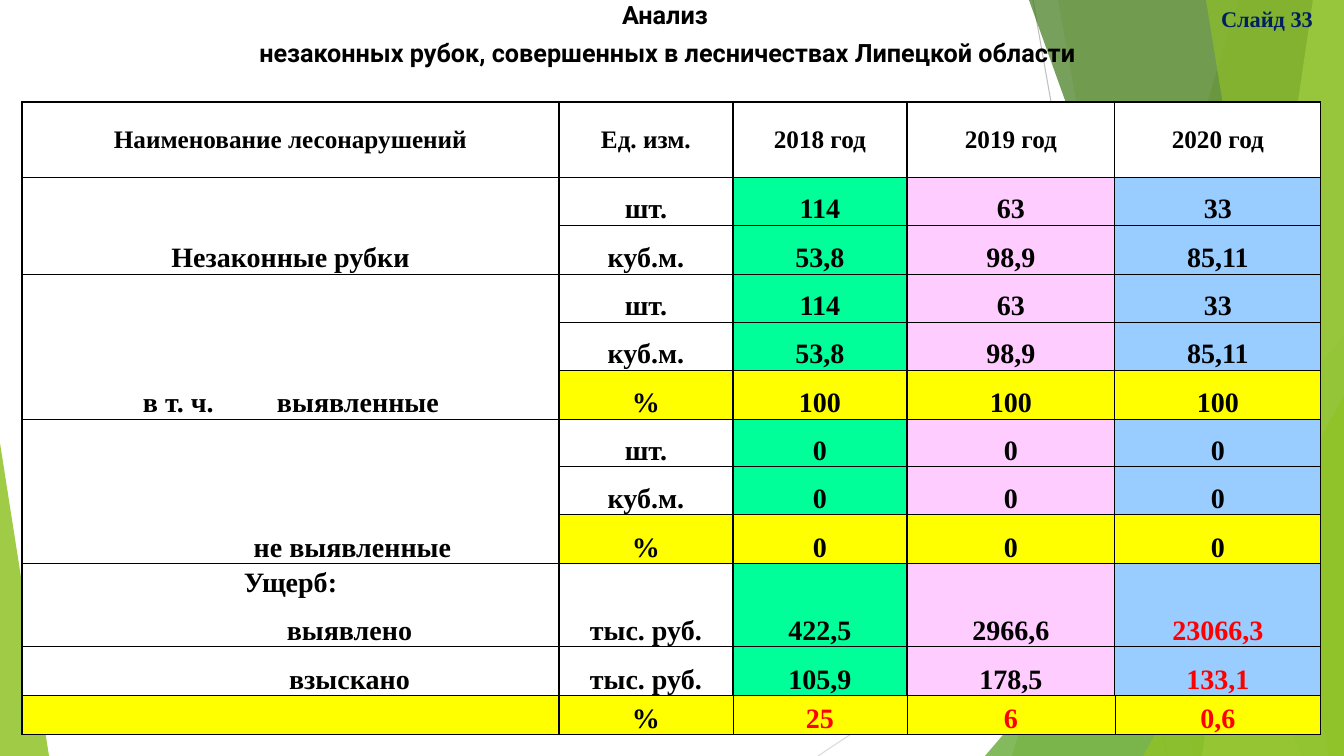
from dataclasses import dataclass
from itertools import pairwise

from lxml.etree import SubElement
from pptx import Presentation
from pptx.dml.color import RGBColor
from pptx.enum.shapes import MSO_CONNECTOR, MSO_SHAPE
from pptx.enum.text import MSO_ANCHOR, MSO_AUTO_SIZE, PP_ALIGN
from pptx.oxml.ns import qn
from pptx.util import Pt

EMU_PER_PX = 914400 / 100.8
WIDTH, HEIGHT = 1344, 756
NO_STYLE = "{2D5ABB26-0587-4C30-8999-92F81FD0307C}"

BLACK = RGBColor(0x00, 0x00, 0x00)
WHITE = RGBColor(0xFF, 0xFF, 0xFF)
RED = RGBColor(0xFF, 0x00, 0x00)
NAVY = RGBColor(0x00, 0x20, 0x60)
YELLOW = RGBColor(0xFF, 0xFF, 0x00)
MINT = RGBColor(0x00, 0xFF, 0x99)
PINK = RGBColor(0xFF, 0xCC, 0xFF)
SKY = RGBColor(0x99, 0xCC, 0xFF)
GRAY = RGBColor(0xBF, 0xBF, 0xBF)
LIGHT_GRAY = RGBColor(0xD9, 0xD9, 0xD9)
GREEN = RGBColor(0x90, 0xC2, 0x26)
MID_GREEN = RGBColor(0x54, 0xA0, 0x21)
DARK_GREEN = RGBColor(0x3F, 0x78, 0x19)
LIME = RGBColor(0xC0, 0xE4, 0x74)


@dataclass(frozen=True)
class Facet:
    """A band from a slanted left edge to the right side of the slide."""
    top_x: int
    bottom_x: int
    color: RGBColor
    opacity: int


@dataclass(frozen=True)
class Triangle:
    """A triangle standing on the bottom of the slide."""
    left: int
    top: int
    width: int
    apex: int
    color: RGBColor
    opacity: int


@dataclass(frozen=True)
class Ray:
    start: tuple[int, int]
    end: tuple[int, int]
    color: RGBColor


RAYS = [
    Ray((1033, 0), (1167, HEIGHT), GRAY),
    Ray((WIDTH, 406), (818, HEIGHT), LIGHT_GRAY),
]
BACKDROP = [
    Facet(1238, 1012, GREEN, 30),
    Facet(1058, 1193, GREEN, 20),
    Triangle(985, 336, 359, 1, MID_GREEN, 72),
    Facet(1029, 1301, DARK_GREEN, 70),
    Facet(1313, 1202, LIME, 70),
    Facet(1206, 1329, GREEN, 65),
    Triangle(1143, 396, 201, 1, GREEN, 80),
    Triangle(0, 443, 49, 0, GREEN, 85),
]

TITLE = ["Анализ", "незаконных рубок, совершенных в лесничествах Липецкой области"]
COLUMN_EDGES = [22, 559, 733, 907, 1115, 1321]
ROW_EDGES = [102, 177, 225, 274, 322, 370, 419, 467, 515, 564, 599, 647, 696, 735]
COLUMN_FILLS = [WHITE, WHITE, MINT, PINK, SKY]
PIECES = ["шт.", "114", "63", "33"]
VOLUME = ["куб.м.", "53,8", "98,9", "85,11"]
ROWS = [
    ["Наименование лесонарушений", "Ед. изм.", "2018 год", "2019 год", "2020 год"],
    ["Незаконные рубки", *PIECES],
    ["", *VOLUME],
    ["в т. ч.\tвыявленные", *PIECES],
    ["", *VOLUME],
    ["", "%", "100", "100", "100"],
    ["не выявленные", "шт.", "0", "0", "0"],
    ["", "куб.м.", "0", "0", "0"],
    ["", "%", "0", "0", "0"],
    ["Ущерб:", "", "", "", ""],
    ["выявлено", "тыс. руб.", "422,5", "2966,6", "23066,3"],
    ["взыскано", "тыс. руб.", "105,9", "178,5", "133,1"],
    ["", "%", "25", "6", "0,6"],
]
MERGED_ROWS = [(1, 2), (3, 5), (6, 8)]
INDENTS = {"в т. ч.\tвыявленные": 121, "не выявленные": 125, "выявлено": 119, "взыскано": 119}
DETECTED_TAB = 134
LAST_ROW = len(ROWS) - 1


def px(length: int) -> int:
    return round(length * EMU_PER_PX)


def write_text(frame, text: str, *, size: int, font: str = "Times New Roman",
               color: RGBColor = BLACK, align=PP_ALIGN.CENTER) -> None:
    paragraph = frame.paragraphs[0]
    paragraph.alignment = align
    run = paragraph.add_run()
    run.text = text
    run.font.name, run.font.size, run.font.bold = font, Pt(size), True
    run.font.color.rgb = color


def paint(shape, color: RGBColor, opacity: int) -> None:
    shape.shadow.inherit = False
    shape.line.fill.background()
    shape.fill.solid()
    shape.fill.fore_color.rgb = color
    fill_color = shape.fill._xPr.find(qn("a:solidFill"))[0]
    SubElement(fill_color, qn("a:alpha"), val=str(opacity * 1000))


def draw_ray(shapes, ray: Ray) -> None:
    line = shapes.add_connector(MSO_CONNECTOR.STRAIGHT, *map(px, ray.start + ray.end))
    line.line.color.rgb, line.line.width = ray.color, Pt(0.75)
    SubElement(line._element.spPr, qn("a:effectLst"))


def draw_facet(shapes, facet: Facet) -> None:
    builder = shapes.build_freeform(facet.top_x, 0, scale=EMU_PER_PX)
    builder.add_line_segments([(WIDTH, 0), (WIDTH, HEIGHT), (facet.bottom_x, HEIGHT)])
    paint(builder.convert_to_shape(), facet.color, facet.opacity)


def draw_triangle(shapes, triangle: Triangle) -> None:
    box = (triangle.left, triangle.top, triangle.width, HEIGHT - triangle.top)
    shape = shapes.add_shape(MSO_SHAPE.ISOSCELES_TRIANGLE, *map(px, box))
    shape.adjustments[0] = triangle.apex
    paint(shape, triangle.color, triangle.opacity)


def add_plain_table(shapes, column_edges: list[int], row_edges: list[int]):
    left, right, top, bottom = column_edges[0], column_edges[-1], row_edges[0], row_edges[-1]
    table = shapes.add_table(len(row_edges) - 1, len(column_edges) - 1,
                             *map(px, (left, top, right - left, bottom - top))).table
    table.first_row = table.horz_banding = False
    table._tbl.tblPr.find(qn("a:tableStyleId")).text = NO_STYLE
    for column, (start, end) in zip(table.columns, pairwise(column_edges)):
        column.width = px(end - start)
    for row, (start, end) in zip(table.rows, pairwise(row_edges)):
        row.height = px(end - start)
    for cell in table.iter_cells():
        cell.margin_left = cell.margin_right = cell.margin_top = px(1)
        cell.margin_bottom = 0
        cell.vertical_anchor = MSO_ANCHOR.BOTTOM
        cell.fill.background()
    return table


def horizontal_width(edge: int, column: int) -> float:
    if edge == 10:  # the damage rows share one open cell
        return 0
    heavy = edge in (0, LAST_ROW + 1) or (edge == 9 and column >= 2) or (edge > 10 and column >= 1)
    return 1 if heavy else 0.5


def vertical_width(edge: int, row: int) -> float:
    return 0.5 if row == LAST_ROW and 2 <= edge <= 4 else 1


def set_borders(cell, row: int, column: int) -> None:
    widths = {"a:lnL": vertical_width(column, row), "a:lnR": vertical_width(column + 1, row),
              "a:lnT": horizontal_width(row, column), "a:lnB": horizontal_width(row + 1, column)}
    properties = cell._tc.get_or_add_tcPr()
    for position, (tag, width) in enumerate(widths.items()):
        line = SubElement(properties, qn(tag), w=str(Pt(width)))
        properties.insert(position, line)
        if width:
            SubElement(SubElement(line, qn("a:solidFill")), qn("a:srgbClr"), val=str(BLACK))
        else:
            SubElement(line, qn("a:noFill"))


def draw_felling_table(shapes) -> None:
    table = add_plain_table(shapes, COLUMN_EDGES, ROW_EDGES)
    for row, texts in enumerate(ROWS):
        percent = texts[1] == "%"
        for column, text in enumerate(texts):
            cell = table.cell(row, column)
            yellow = percent and (column > 0 or row == LAST_ROW)
            cell.fill.solid()
            cell.fill.fore_color.rgb = (
                WHITE if row == 0 else YELLOW if yellow else COLUMN_FILLS[column])
            set_borders(cell, row, column)
            if row == 0:
                cell.vertical_anchor = MSO_ANCHOR.MIDDLE
            if not text:
                continue
            red = (column == 4 and row >= 10) or (column >= 2 and row == LAST_ROW)
            cell.margin_left = px(INDENTS.get(text, 1))
            write_text(cell.text_frame, text, size=20 if row else 18, color=RED if red else BLACK,
                       align=PP_ALIGN.LEFT if "\t" in text else PP_ALIGN.CENTER)
            if "\t" in text:
                paragraph = cell.text_frame.paragraphs[0]
                tabs = SubElement(paragraph._p.get_or_add_pPr(), qn("a:tabLst"))
                SubElement(tabs, qn("a:tab"), pos=str(px(DETECTED_TAB)), algn="l")
    for first, last in MERGED_ROWS:
        table.cell(first, 0).merge(table.cell(last, 0))


def main() -> None:
    presentation = Presentation()
    presentation.slide_width, presentation.slide_height = px(WIDTH), px(HEIGHT)
    shapes = presentation.slides.add_slide(presentation.slide_layouts[6]).shapes

    # Green backdrop
    for ray in RAYS:
        draw_ray(shapes, ray)
    for part in BACKDROP:
        (draw_facet if isinstance(part, Facet) else draw_triangle)(shapes, part)

    # Data and title
    draw_felling_table(shapes)
    title = add_plain_table(shapes, [217, 1113], [0, 31, 69])
    for cell, text in zip(title.iter_cells(), TITLE):
        write_text(cell.text_frame, text, size=18, font="Roboto")
    title.cell(1, 0).margin_left = px(6)

    # Slide number label
    label = shapes.add_textbox(*map(px, (1210, 0, 114, 37))).text_frame
    label.word_wrap, label.auto_size = False, MSO_AUTO_SIZE.SHAPE_TO_FIT_TEXT
    write_text(label, "Слайд 33", size=16, color=NAVY)

    presentation.save("out.pptx")


if __name__ == "__main__":
    main()
